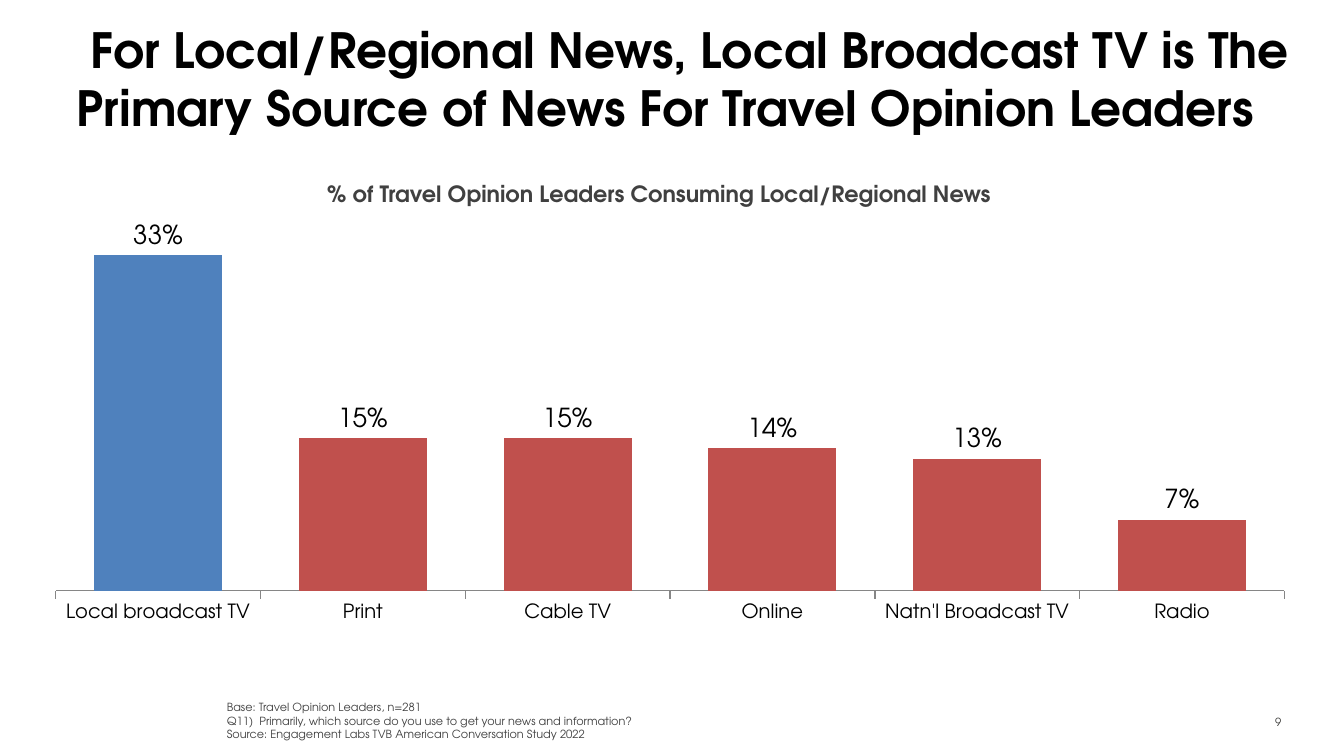
from pptx import Presentation
from pptx.chart.data import CategoryChartData as ChartData
from pptx.dml.color import RGBColor
from pptx.enum.chart import XL_CHART_TYPE as Kind, XL_LABEL_POSITION as Spot, XL_TICK_MARK as Tick
from pptx.enum.text import MSO_ANCHOR as Anchor, PP_ALIGN as Align
from pptx.oxml import parse_xml
from pptx.oxml.ns import nsdecls
from pptx.util import Pt

# Content
FACE = "TeX Gyre Adventor"
BLUE, RED, GREY = "4F81BD", "C0504D", "404040"
TITLE = [" For Local/Regional News, Local Broadcast TV is The "
         "Primary Source of News For Travel Opinion Leaders"]
HEAD = ["% of Travel Opinion Leaders Consuming Local/Regional News"]
NOTES = [
    "Base: Travel Opinion Leaders, n=281",
    "Q11)  Primarily, which source do you use to get your news and information?",
    "Source: Engagement Labs TVB American Conversation Study 2022",
]
PAGE = ["9"]
SHARES = {
    "Local broadcast TV": 0.33,
    "Print": 0.15,
    "Cable TV": 0.15,
    "Online": 0.14,
    "Natn'l Broadcast TV": 0.13,
    "Radio": 0.07,
}
PLOT = {"x": 0, "y": 0.02, "w": 1, "h": 0.77}


def color(code):
    return RGBColor.from_string(code)


def paint(fill, code):
    fill.solid()
    fill.fore_color.rgb = color(code)


def style(font, size, code="000000", bold=False):
    font.name, font.size, font.bold = FACE, Pt(size), bold
    font.color.rgb = color(code)


def add_text(slide, lines, area, size, code, bold=False,
             align=Align.LEFT, anchor=Anchor.TOP, top=3.6, wrap=True):
    frame = slide.shapes.add_textbox(*map(Pt, area)).text_frame
    frame.word_wrap = wrap
    frame.vertical_anchor = anchor
    frame.margin_top = Pt(top)
    for i, line in enumerate(lines):
        para = frame.add_paragraph() if i else frame.paragraphs[0]
        para.alignment = align
        run = para.add_run()
        run.text = line
        style(run.font, size, code, bold)


def add_bars(slide, area):
    data = ChartData(number_format="0%")
    data.categories = list(SHARES)
    data.add_series("Series 1", SHARES.values())
    chart = slide.shapes.add_chart(Kind.COLUMN_CLUSTERED, *map(Pt, area), data).chart
    chart.has_legend = chart.has_title = False
    style(chart.font, 18)

    # Axes
    cats, vals = chart.category_axis, chart.value_axis
    cats.major_tick_mark = Tick.OUTSIDE
    cats.format.line.color.rgb = color("868686")
    cats.format.line.width = Pt(0.75)
    style(cats.tick_labels.font, 10.5)
    vals.minimum_scale, vals.maximum_scale = 0, 0.4
    vals.has_major_gridlines = vals.visible = False

    # Bars and labels
    plot = chart.plots[0]
    plot.gap_width = 60
    plot.vary_by_categories = False
    bars = plot.series[0]
    paint(bars.format.fill, RED)
    paint(bars.points[0].format.fill, BLUE)
    labels = bars.data_labels
    labels.show_value = True
    labels.number_format, labels.number_format_is_linked = "0%", False
    labels.position = Spot.OUTSIDE_END
    style(labels.font, 14)

    # Fixed plot area
    area_xml = chart._chartSpace.chart.plotArea
    for old in area_xml.findall("{*}layout"):
        area_xml.remove(old)
    sizes = "".join(f'<c:{key} val="{val}"/>' for key, val in PLOT.items())
    area_xml.insert(0, parse_xml(
        f'<c:layout {nsdecls("c")}><c:manualLayout><c:layoutTarget val="inner"/>'
        f'<c:xMode val="edge"/><c:yMode val="edge"/>{sizes}'
        '</c:manualLayout></c:layout>'))


def main():
    deck = Presentation()
    deck.slide_width, deck.slide_height = Pt(720), Pt(405)
    slide = deck.slides.add_slide(deck.slide_layouts[6])
    add_text(slide, PAGE, (651, 376, 42.5, 21.5), 6, "3C3C3A",
             align=Align.RIGHT, anchor=Anchor.MIDDLE)
    add_text(slide, TITLE, (34, 10.8, 666.5, 64), 26, "000000", bold=True, top=0)
    add_bars(slide, (29.5, 93, 659, 283))
    add_text(slide, HEAD, (166.5, 93, 373.5, 21.5), 12, GREY, bold=True,
             align=Align.CENTER, wrap=False)
    add_text(slide, NOTES, (114.5, 371.5, 587, 29), 6, GREY, anchor=Anchor.BOTTOM)
    deck.save("out.pptx")


if __name__ == "__main__":
    main()
